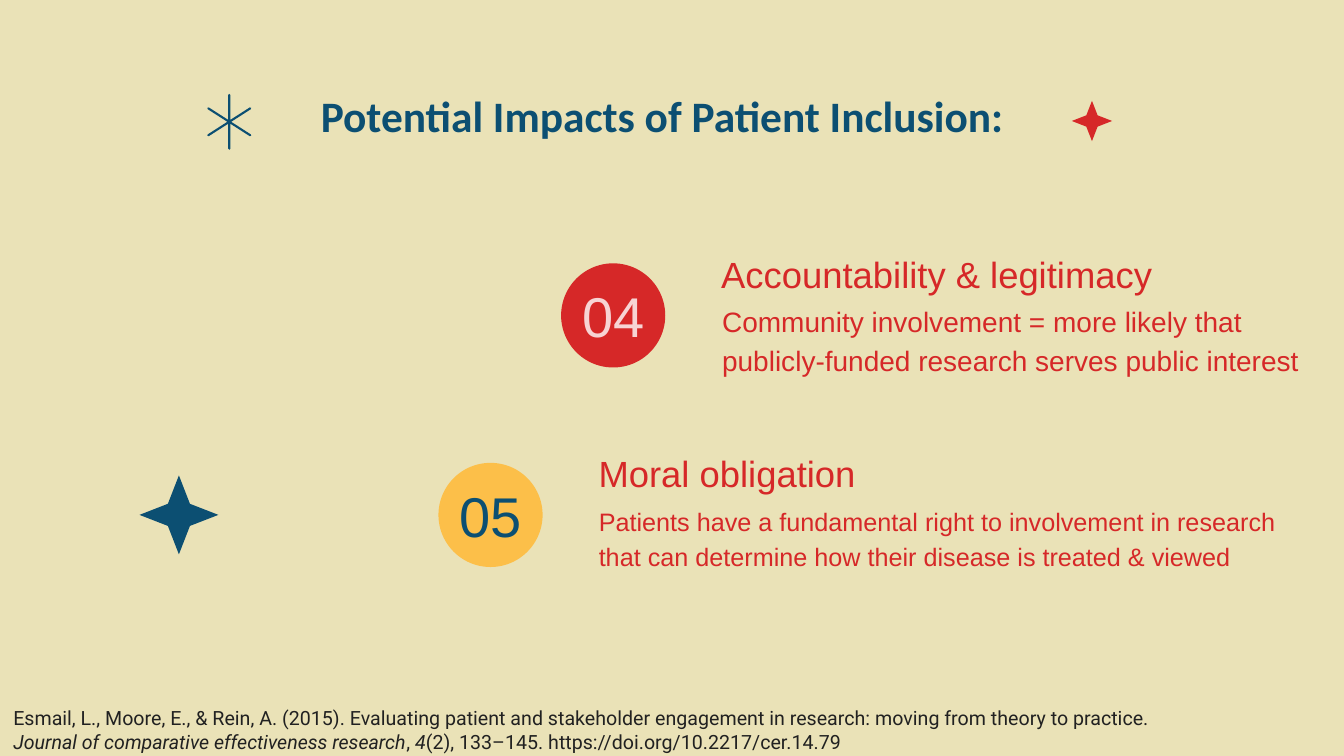
import pptx
import pptx.dml.color
import pptx.enum.shapes
import pptx.enum.text
import pptx.util

RGBColor = pptx.dml.color.RGBColor
MSO_SHAPE = pptx.enum.shapes.MSO_SHAPE
MSO_ANCHOR = pptx.enum.text.MSO_ANCHOR
MSO_AUTO_SIZE = pptx.enum.text.MSO_AUTO_SIZE
PP_ALIGN = pptx.enum.text.PP_ALIGN

CREAM = RGBColor(0xEA, 0xE2, 0xB7)
NAVY = RGBColor(0x0C, 0x4F, 0x72)
RED = RGBColor(0xD6, 0x28, 0x28)
PINK = RGBColor(0xF7, 0xD4, 0xD4)
AMBER = RGBColor(0xFC, 0xBF, 0x49)
INK = RGBColor(0x21, 0x21, 0x21)

COLUMNS, ROWS = 160, 90
BADGE = 12.4
POINT_DEPTH = 0.198


def write(paragraph, text, *, size, color, font="Arial", bold=False, italic=False):
    run = paragraph.add_run()
    run.text = text
    run.font.size = pptx.util.Pt(size)
    run.font.name = font
    run.font.bold = bold
    run.font.italic = italic
    run.font.color.rgb = color


class Deck:
    def __init__(self):
        self.prs = pptx.Presentation()
        self.prs.slide_width = pptx.util.Inches(13.33)
        self.prs.slide_height = pptx.util.Inches(7.5)
        self.slide = self.prs.slides.add_slide(self.prs.slide_layouts[6])
        self.slide.background.fill.solid()
        self.slide.background.fill.fore_color.rgb = CREAM

    def cells(self, left, top, width, height):
        column = self.prs.slide_width / COLUMNS
        row = self.prs.slide_height / ROWS
        return (int(left * column), int(top * row),
                int(width * column), int(height * row))

    def ornament(self, kind, *place, fill=None, line=None, depth=None, rotation=0):
        ornament = self.slide.shapes.add_shape(kind, *self.cells(*place))
        ornament.shadow.inherit = False
        ornament.rotation = rotation
        if depth is not None:
            ornament.adjustments[0] = depth
        if fill is None:
            ornament.fill.background()
        else:
            ornament.fill.solid()
            ornament.fill.fore_color.rgb = fill
        if line is None:
            ornament.line.fill.background()
        else:
            ornament.line.color.rgb = line
            ornament.line.width = pptx.util.Pt(1.5)

    def text(self, pieces, *place, align=PP_ALIGN.LEFT, inset=0.13,
             spacing=None, before=None, grow=False, **style):
        frame = self.slide.shapes.add_textbox(*self.cells(*place)).text_frame
        frame.word_wrap = True
        if grow:
            frame.auto_size = MSO_AUTO_SIZE.SHAPE_TO_FIT_TEXT
        else:
            frame.vertical_anchor = MSO_ANCHOR.MIDDLE
            frame.margin_left = frame.margin_right = pptx.util.Inches(inset)
            frame.margin_top = frame.margin_bottom = pptx.util.Inches(inset)
        paragraph = frame.paragraphs[0]
        paragraph.alignment = align
        if spacing:
            paragraph.line_spacing = spacing
        if before:
            paragraph.space_before = pptx.util.Pt(before)
        for piece, italic in pieces:
            write(paragraph, piece, italic=italic, **style)

    def impact(self, left, top, number, heading, heading_width, fill, number_color):
        self.ornament(MSO_SHAPE.OVAL, left, top, BADGE, BADGE, fill=fill)
        self.text([(number, False)], left - 0.55, top + 1, 13.5, 10.4,
                  align=PP_ALIGN.CENTER, size=40, color=number_color)
        self.text([(heading, False)], left + 17.5, top - 2.35, heading_width, 7.2,
                  size=26, color=RED)


def main():
    deck = Deck()
    deck.text([("Potential Impacts of Patient Inclusion:", False)],
              29.9, 9.5, 97.8, 8.4, align=PP_ALIGN.CENTER,
              size=31, color=NAVY, font="Calibri", bold=True)
    deck.ornament(MSO_SHAPE.STAR_6_POINT, 24.8, 11.3, 5, 6.4, line=NAVY, depth=0)
    deck.ornament(MSO_SHAPE.STAR_4_POINT, 127.6, 12, 4.8, 4.8,
                  fill=RED, depth=POINT_DEPTH, rotation=270)
    deck.ornament(MSO_SHAPE.STAR_4_POINT, 16.6, 56.6, 9.4, 9.4,
                  fill=NAVY, depth=POINT_DEPTH)

    deck.impact(66.8, 31.35, "04", "Accountability & legitimacy", 62.9, RED, PINK)
    deck.text([("Community involvement = more likely that "
                "publicly-funded research serves public interest", False)],
              84.4, 35.2, 74.3, 10.1, spacing=1.15, before=12, size=20, color=RED)

    deck.impact(52.2, 55.1, "05", "Moral obligation", 85, AMBER, NAVY)
    deck.text([("Patients have a fundamental right to involvement in research "
                "that can determine how their disease is treated & viewed", False)],
              70.1, 59.2, 85, 9.6, spacing=1.15, grow=True, size=18, color=RED)

    citation = [
        ("Esmail, L., Moore, E., & Rein, A. (2015). Evaluating patient and stakeholder "
         "engagement in research: moving from theory to practice. ", False),
        ("Journal of comparative effectiveness research", True),
        (", ", False),
        ("4", True),
        ("(2), 133–145. https://doi.org/10.2217/cer.14.79", False),
    ]
    deck.text(citation, 0.4, 83.5, 145.2, 6.8, grow=True,
              size=14, color=INK, font="Roboto")
    deck.prs.save("out.pptx")


if __name__ == "__main__":
    main()
